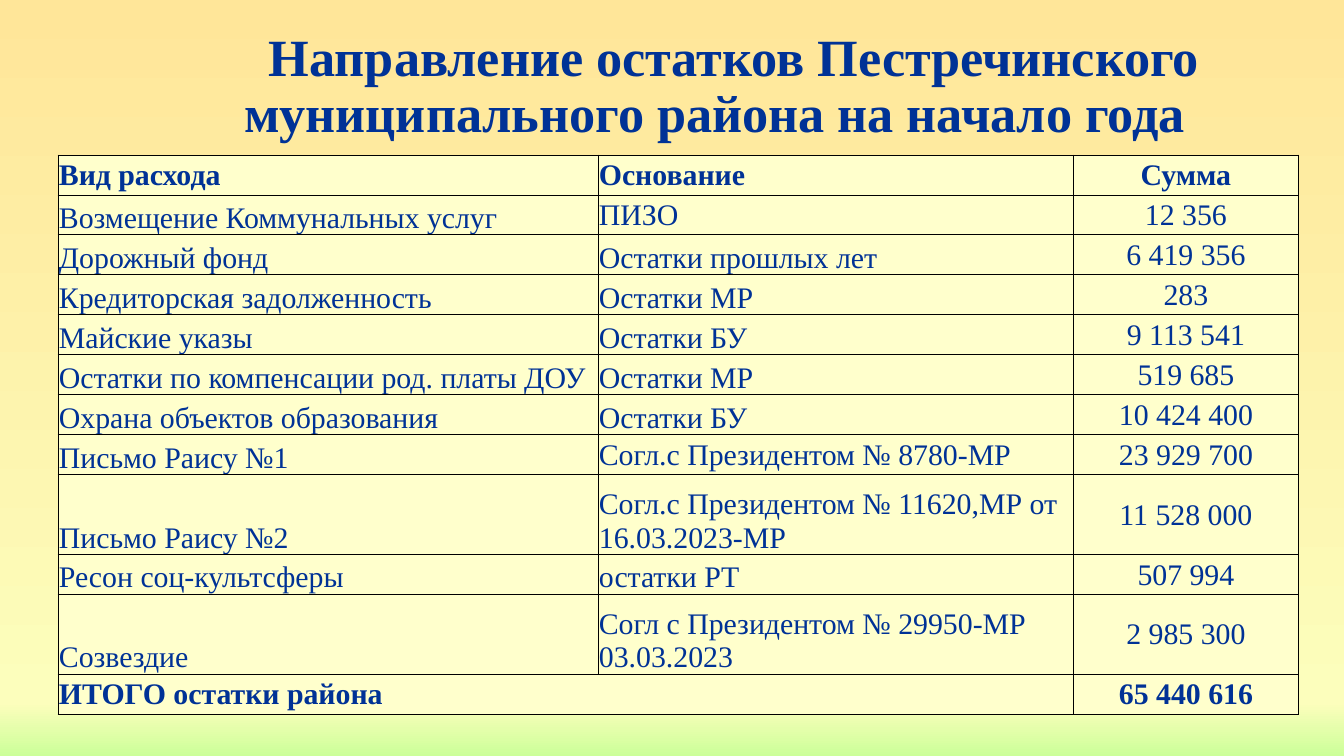
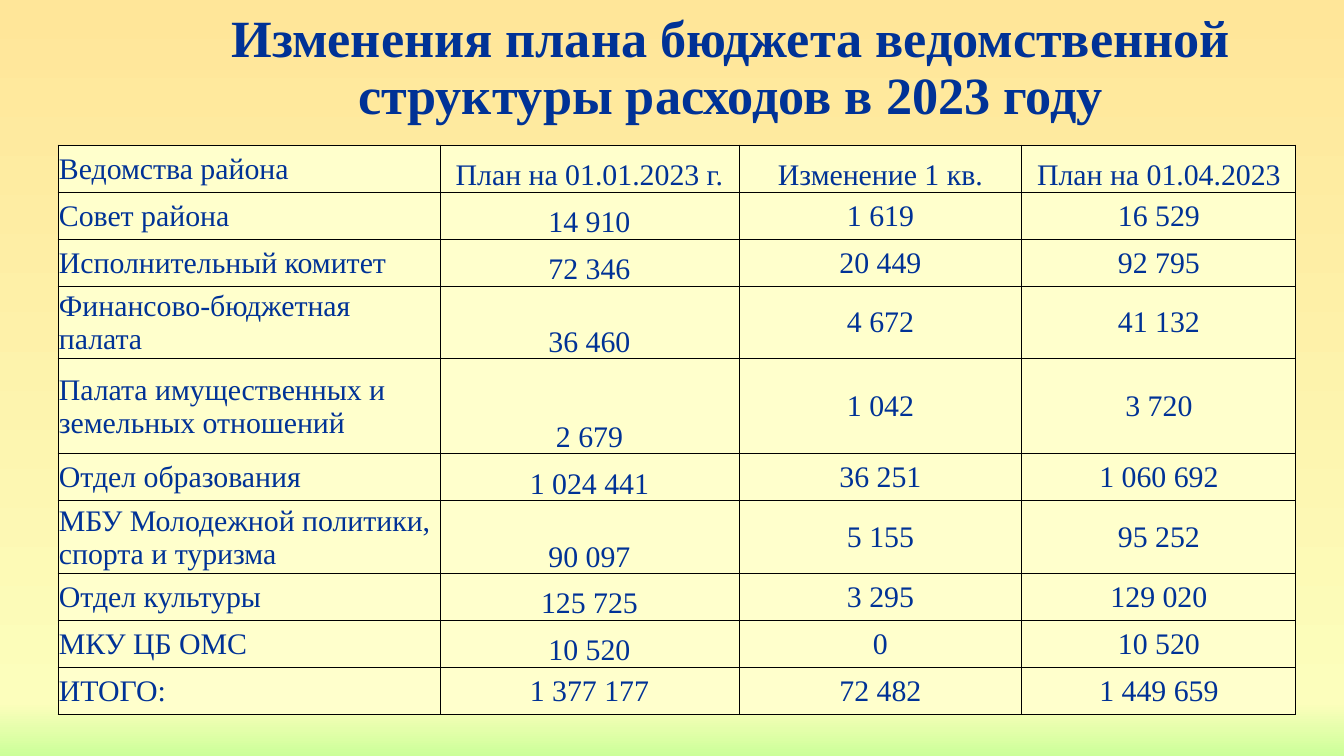
from copy import deepcopy
from dataclasses import dataclass

from lxml.etree import SubElement
from pptx import Presentation
from pptx.dml.color import RGBColor
from pptx.enum.text import MSO_ANCHOR, PP_ALIGN
from pptx.oxml import parse_xml
from pptx.oxml.ns import nsdecls, qn
from pptx.util import Pt


@dataclass(frozen=True)
class Theme:
    font: str = "Times New Roman"
    ink: str = "003296"
    cell: str = "FFFFCC"
    border: str = "000000"
    background: tuple = ((0, "FFE699"), (0.93, "FCFEBC"), (1, "CCFF99"))
    title_size: int = 28
    cell_size: int = 16
    border_width: float = 0.5


THEME = Theme()
ANCHORS = {"m": MSO_ANCHOR.MIDDLE, "b": MSO_ANCHOR.BOTTOM}
ALIGNS = {"l": PP_ALIGN.LEFT, "c": PP_ALIGN.CENTER}

# Each row: height, vertical anchor of each cell, texts.
BALANCES = [
    (40, "mmm", ("Вид расхода", "Основание", "Сумма")),
    (40, "bmm", ("Возмещение Коммунальных услуг", "ПИЗО", "12 356")),
    (40, "bbm", ("Дорожный фонд", "Остатки прошлых лет", "6 419 356")),
    (40, "bbm", ("Кредиторская задолженность", "Остатки МР", "283")),
    (40, "bbm", ("Майские указы", "Остатки БУ", "9 113 541")),
    (40, "bbm", ("Остатки по компенсации род. платы ДОУ", "Остатки МР", "519 685")),
    (40, "bbm", ("Охрана объектов образования", "Остатки БУ", "10 424 400")),
    (40, "bmm", ("Письмо Раису №1", "Согл.с Президентом № 8780-МР", "23 929 700")),
    (80, "bbm", ("Письмо Раису №2",
                 "Согл.с Президентом № 11620,МР от 16.03.2023-МР", "11 528 000")),
    (40, "bbm", ("Ресон соц-культсферы", "остатки РТ", "507 994")),
    (80, "bbm", ("Созвездие", "Согл с Президентом № 29950-МР 03.03.2023", "2 985 300")),
    (40, "mmm", ("ИТОГО остатки района", "", "65 440 616")),
]
DEPARTMENTS = [
    (47, "mbbb", ("Ведомства района", "План на 01.01.2023 г.",
                  "Изменение 1 кв.", "План на 01.04.2023")),
    (47, "mbmm", ("Совет района", "14 910", "1 619", "16 529")),
    (47, "mbmm", ("Исполнительный комитет", "72 346", "20 449", "92 795")),
    (67, "mbmm", ("Финансово-бюджетная палата", "36 460", "4 672", "41 132")),
    (95, "mbmm", ("Палата имущественных и земельных отношений",
                  "2 679", "1 042", "3 720")),
    (47, "mbmm", ("Отдел образования", "1 024 441", "36 251", "1 060 692")),
    (73, "mbmm", ("МБУ Молодежной политики, спорта и туризма",
                  "90 097", "5 155", "95 252")),
    (47, "mbmm", ("Отдел культуры", "125 725", "3 295", "129 020")),
    (47, "mbmm", ("МКУ ЦБ ОМС", "10 520", "0", "10 520")),
    (47, "mmmm", ("ИТОГО:", "1 377 177", "72 482", "1 449 659")),
]


def px(n):
    return round(n * 914400 / 134.4)


def style_run(r, size, bold):
    r.font.name = THEME.font
    r.font.size = Pt(size)
    r.font.bold = bold
    r.font.color.rgb = RGBColor.from_string(THEME.ink)


def set_background(master):
    fill = master.background.fill
    fill.gradient()
    fill.gradient_angle = 270
    stops = master.element.find(".//" + qn("a:gsLst"))
    stops.append(deepcopy(stops[-1]))
    for stop, (position, color) in zip(fill.gradient_stops, THEME.background):
        stop.position = position
        stop.color.rgb = RGBColor.from_string(color)


def add_title(s, box, text, indent=0):
    """Centred bold heading; indent moves its first line to the right."""
    tf = s.shapes.add_textbox(*map(px, box)).text_frame
    tf.word_wrap = True
    tf.vertical_anchor = MSO_ANCHOR.MIDDLE
    p = tf.paragraphs[0]
    p.text = text
    p.alignment = PP_ALIGN.CENTER
    p.line_spacing = 0.9
    p._p.get_or_add_pPr().set("indent", str(px(indent)))
    style_run(p.runs[0], THEME.title_size, True)


def add_borders(cell):
    tcPr = cell._tc.get_or_add_tcPr()
    for i, side in enumerate("LRTB"):
        ln = parse_xml(f'<a:ln{side} {nsdecls("a")} w="{Pt(THEME.border_width)}"/>')
        fill = SubElement(ln, qn("a:solidFill"))
        SubElement(fill, qn("a:srgbClr"), val=THEME.border)
        tcPr.insert(i, ln)


def fill_cell(cell, text, anchor, align, bold):
    cell.fill.solid()
    cell.fill.fore_color.rgb = RGBColor.from_string(THEME.cell)
    add_borders(cell)
    cell.margin_left = cell.margin_right = cell.margin_top = px(1)
    cell.margin_bottom = 0
    cell.vertical_anchor = ANCHORS[anchor]
    p = cell.text_frame.paragraphs[0]
    p.text = text
    p.alignment = ALIGNS[align]
    for r in p.runs:
        style_run(r, THEME.cell_size, bold)


def add_budget_table(s, left, top, widths, rows, aligns, bold_rows=()):
    heights = [height for height, _, _ in rows]
    box = (left, top, sum(widths), sum(heights))
    table = s.shapes.add_table(len(rows), len(widths), *map(px, box)).table
    table.first_row = table.horz_banding = False
    for column, width in zip(table.columns, widths):
        column.width = px(width)
    for i, (height, anchors, texts) in enumerate(rows):
        table.rows[i].height = px(height)
        for j, (text, anchor, align) in enumerate(zip(texts, anchors, aligns)):
            fill_cell(table.cell(i, j), text, anchor, align, i in bold_rows)
    return table


def balances_slide(s):
    last = len(BALANCES) - 1
    table = add_budget_table(s, 58, 155, (540, 475, 226), BALANCES, "llc", (0, last))
    table.cell(last, 0).merge(table.cell(last, 1))
    add_title(s, (122, 19, 1185, 137), "Направление остатков Пестречинского "
              "муниципального района на начало года", indent=39)


def departments_slide(s):
    add_budget_table(s, 58, 145, (382, 299, 283, 274), DEPARTMENTS, "lccc")
    add_title(s, (168, -13, 1125, 164), "Изменения плана бюджета ведомственной "
              "структуры расходов в 2023 году")


def main():
    prs = Presentation()
    prs.slide_width, prs.slide_height = px(1344), px(756)
    set_background(prs.slide_master)
    for build in (balances_slide, departments_slide):
        build(prs.slides.add_slide(prs.slide_layouts[6]))
    prs.save("out.pptx")


if __name__ == "__main__":
    main()
